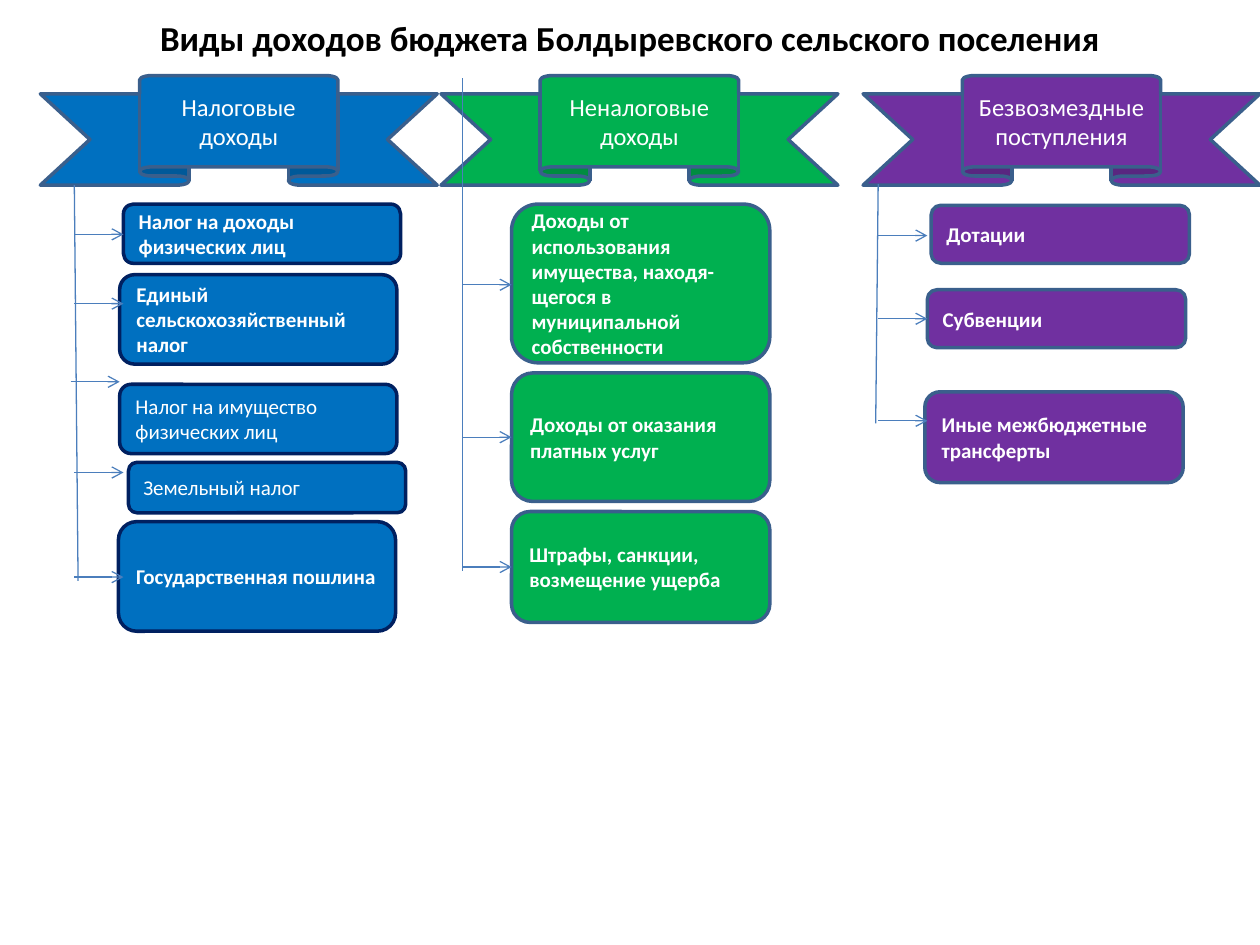
from pptx import Presentation
from pptx.util import Inches, Pt
from pptx.dml.color import RGBColor
from pptx.enum.shapes import MSO_SHAPE, MSO_CONNECTOR
from pptx.enum.text import PP_ALIGN, MSO_ANCHOR
from pptx.oxml.ns import qn
from lxml import etree

RIBBON, ROUND = MSO_SHAPE.UP_RIBBON, MSO_SHAPE.ROUNDED_RECTANGLE
STRAIGHT = MSO_CONNECTOR.STRAIGHT
LEFT, CENTER = PP_ALIGN.LEFT, PP_ALIGN.CENTER
MIDDLE = MSO_ANCHOR.MIDDLE

# Content
COLORS = {
    "blue": "0070C0", "green": "00B050", "purple": "7030A0",
    "navy": "002060", "steel": "3A5F8C", "line": "4B7EBC",
    "white": "FFFFFF", "black": "000000",
}
FONT = "Calibri"
TITLE = "Виды доходов бюджета Болдыревского сельского поселения"

# Item: text, bold, box shift, box top, box height, arrow shift, arrow y
COLUMNS = [
    {"head": "Налоговые доходы", "fill": "blue", "edge": "navy",
     "left": 0.32, "trunk": (0.59, 1.47, 0.62, 4.61), "wide": 2.2,
     "items": [
         ("Налог на доходы физических лиц", True, 0, 1.62, 0.47, 0, 1.86),
         ("Единый сельскохозяйственный налог", True, -0.03, 2.18, 0.71, 0, 2.41),
         ("Налог на имущество физических лиц", False, -0.03, 3.05, 0.55, -0.03, 3.03),
         ("Земельный налог", False, 0.04, 3.67, 0.4, 0, 3.75),
         ("Государственная пошлина", True, -0.04, 4.14, 0.87, 0, 4.58),
     ]},
    {"head": "Неналоговые доходы", "fill": "green", "edge": "steel",
     "left": 3.5, "trunk": (3.67, 0.62, 3.67, 4.53), "wide": 2.05,
     "items": [
         ("Доходы от использования имущества, находя-щегося в "
          "муниципальной собственности", True, 0, 1.62, 1.26, 0, 2.26),
         ("Доходы от оказания платных услуг", True, 0, 2.96, 1.02, 0, 3.47),
         ("Штрафы, санкции, возмещение ущерба", True, 0, 4.06, 0.88, 0, 4.5),
     ]},
    {"head": "Безвозмездные поступления", "fill": "purple", "edge": "steel",
     "left": 6.85, "trunk": (6.97, 1.46, 6.95, 3.36), "wide": 2.05,
     "items": [
         ("Дотации", True, 0.03, 1.63, 0.46, 0, 1.87),
         ("Субвенции", True, 0, 2.3, 0.46, 0, 2.53),
         ("Иные межбюджетные трансферты", True, -0.02, 3.11, 0.72, 0, 3.34),
     ]},
]
HEAD_TOP, HEAD_WIDE, HEAD_HIGH = 0.6, 3.15, 0.87
REACH = 0.39  # arrow length, from trunk to boxes

prs = Presentation()
prs.slide_width, prs.slide_height = Inches(10), Inches(7.5)
slide = prs.slides.add_slide(prs.slide_layouts[6])


def color(name):
    return RGBColor.from_string(COLORS[name])


def write(shape, text, size, bold, ink, align):
    frame = shape.text_frame
    frame.word_wrap = True
    frame.vertical_anchor = MIDDLE
    para = frame.paragraphs[0]
    para.alignment = align
    run = para.add_run()
    run.text = text
    font = run.font
    font.name, font.size, font.bold = FONT, Pt(size), bold
    font.color.rgb = color(ink)


def block(kind, area, fill, edge):
    shape = slide.shapes.add_shape(kind, *map(Inches, area))
    shape.shadow.inherit = False
    shape.fill.solid()
    shape.fill.fore_color.rgb = color(fill)
    shape.line.color.rgb = color(edge)
    shape.line.width = Pt(2)
    return shape


def link(ends, arrow=False):
    line = slide.shapes.add_connector(STRAIGHT, *map(Inches, ends))
    line.line.color.rgb = color("line")
    line.line.width = Pt(0.75)
    props = line._element.spPr
    if arrow:
        etree.SubElement(props.find(qn("a:ln")), qn("a:tailEnd"), type="arrow")
    etree.SubElement(props, qn("a:effectLst"))


# Title
title = slide.shapes.add_textbox(*map(Inches, (0.5, 0, 9, 0.6)))
write(title, TITLE, 20, True, "black", CENTER)

# Ribbons
for col in COLUMNS:
    area = (col["left"], HEAD_TOP, HEAD_WIDE, HEAD_HIGH)
    ribbon = block(RIBBON, area, col["fill"], "steel")
    write(ribbon, col["head"], 14, False, "white", CENTER)

# Boxes, trunks and arrows
for col in COLUMNS:
    x = col["trunk"][0]
    link(col["trunk"])
    for text, bold, shift, top, high, nudge, y in col["items"]:
        area = (x + REACH + shift, top, col["wide"], high)
        box = block(ROUND, area, col["fill"], col["edge"])
        write(box, text, 12, bold, "white", LEFT)
        link((x + nudge, y, x + nudge + REACH, y), arrow=True)

prs.save("out.pptx")
